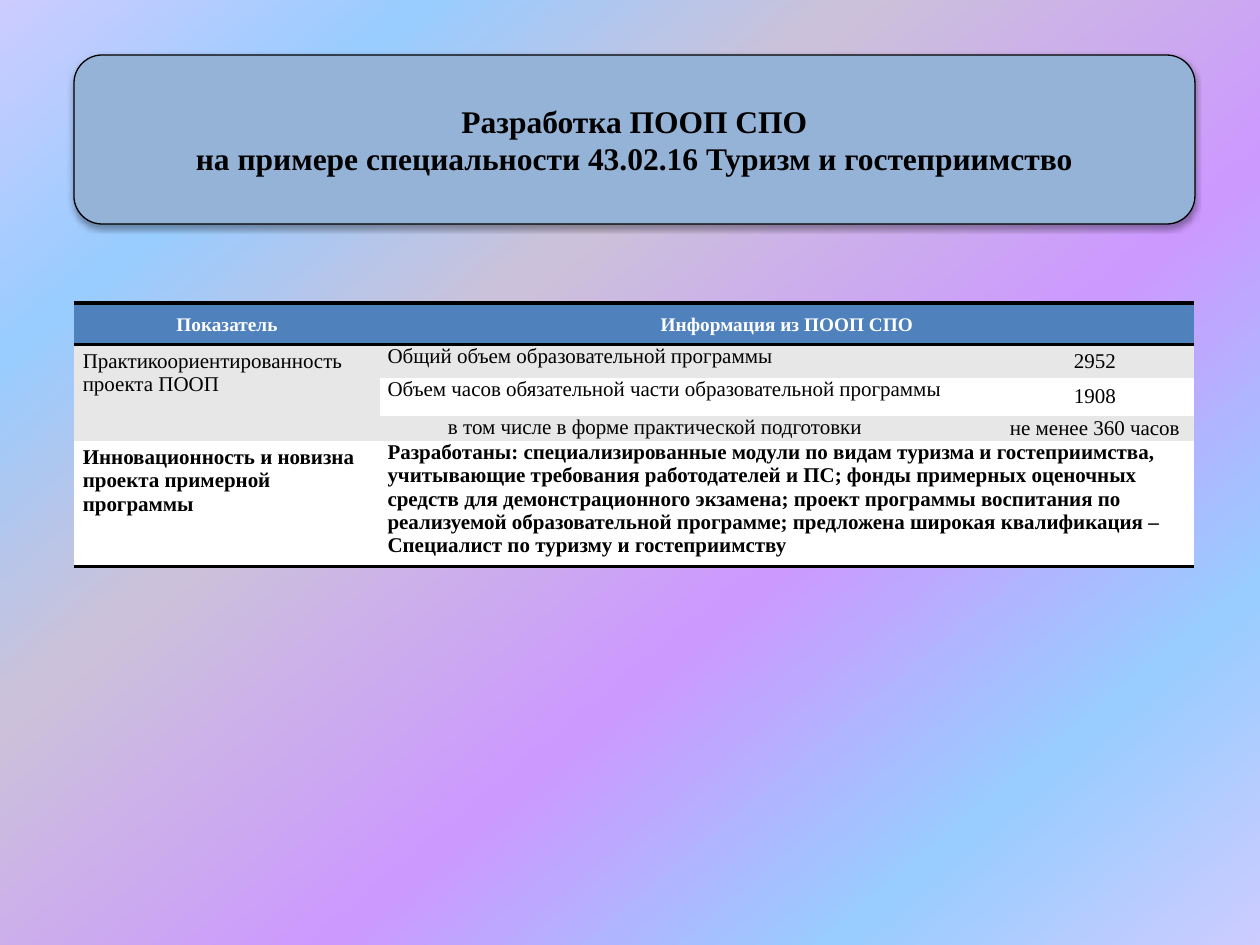
import pptx
import pptx.util
import pptx.dml.color
import pptx.enum.shapes
import pptx.enum.text
import pptx.oxml
import pptx.oxml.ns

SCALE = 914400 / 126
COLORS = {"black": "000000", "white": "FFFFFF", "banner": "95B3D7",
          "header": "4F81BD", "band": "E7E7E7"}
GRADIENT = [(0, "CCCCFF"), (18, "99CCFF"), (36, "CCC1DA"),
            (61, "CC99FF"), (82, "99CCFF"), (100, "CCCCFF")]
NAMESPACE = pptx.oxml.ns.nsdecls("a")
CENTER = pptx.enum.text.PP_ALIGN.CENTER
LEFT = pptx.enum.text.PP_ALIGN.LEFT
MIDDLE = pptx.enum.text.MSO_ANCHOR.MIDDLE
TOP = pptx.enum.text.MSO_ANCHOR.TOP


def px(value):
    return pptx.util.Emu(round(value * SCALE))


def format_text(text_frame, size, color, bold, alignment):
    for paragraph in text_frame.paragraphs:
        paragraph.alignment = alignment
        for run in paragraph.runs:
            run.font.name = "Times New Roman"
            run.font.size = pptx.util.Pt(size)
            run.font.bold = bold
            run.font.color.rgb = pptx.dml.color.RGBColor.from_string(COLORS[color])


presentation = pptx.Presentation()
presentation.slide_width = px(1260)
presentation.slide_height = px(945)
slide = presentation.slides.add_slide(presentation.slide_layouts[6])

background = slide.background.fill
background.gradient()
stops = background.gradient_stops
stop_list = slide._element.find(".//" + pptx.oxml.ns.qn("a:gsLst"))
for stop in list(stop_list):
    stop_list.remove(stop)
for position, color in GRADIENT:
    stop_list.append(pptx.oxml.parse_xml(
        f'<a:gs {NAMESPACE} pos="{position * 1000}"><a:srgbClr val="{color}"/></a:gs>'))
direction = slide._element.find(".//" + pptx.oxml.ns.qn("a:lin"))
direction.set("ang", str(50 * 60000))
direction.set("scaled", "0")

banner = slide.shapes.add_shape(
    pptx.enum.shapes.MSO_SHAPE.ROUNDED_RECTANGLE, px(74), px(55), px(1121), px(169))
banner.fill.solid()
banner.fill.fore_color.rgb = pptx.dml.color.RGBColor.from_string(COLORS["banner"])
banner.line.color.rgb = pptx.dml.color.RGBColor.from_string(COLORS["black"])
banner.line.width = pptx.util.Pt(0.75)
banner.shadow.inherit = False
banner._element.spPr.find(pptx.oxml.ns.qn("a:effectLst")).append(pptx.oxml.parse_xml(
    f'<a:outerShdw {NAMESPACE} blurRad="40000" dist="23000" dir="5400000" rotWithShape="0">'
    f'<a:srgbClr val="{COLORS["black"]}"><a:alpha val="35000"/></a:srgbClr></a:outerShdw>'))
banner.text_frame.text = ("Разработка ПООП СПО\n"
                          "на примере специальности 43.02.16 Туризм и гостеприимство")
banner.text_frame.vertical_anchor = MIDDLE
format_text(banner.text_frame, 18, "black", True, CENTER)

column_widths = [306, 616, 198]
row_heights = [42, 33, 38, 25, 126]
row_fills = ["header", "band", "white", "band", "white"]
row_borders = {0: ["lnT", "lnB"], 4: ["lnB"]}
rows = [
    ["Показатель", "Информация из ПООП СПО", ""],
    ["Практикоориентированность проекта ПООП", "Общий объем образовательной программы", "2952"],
    ["", "Объем часов обязательной части образовательной программы", "1908"],
    ["", "в том числе в форме практической подготовки", "не менее 360 часов"],
    ["Инновационность и новизна проекта примерной программы",
     "Разработаны: специализированные модули по видам туризма и гостеприимства, "
     "учитывающие требования работодателей и ПС; фонды примерных оценочных средств "
     "для демонстрационного экзамена; проект программы воспитания по реализуемой "
     "образовательной программе; предложена широкая квалификация – "
     "Специалист по туризму и гостеприимству", ""],
]

table = slide.shapes.add_table(
    len(rows), len(column_widths), px(74), px(303),
    px(sum(column_widths)), px(sum(row_heights))).table
table.first_row = False
table.horz_banding = False
style = table._tbl.tblPr.find(pptx.oxml.ns.qn("a:tableStyleId"))
style.text = "{2D5ABB26-0587-4C30-8999-92F81FD0307C}"
for column, width in zip(table.columns, column_widths):
    column.width = px(width)
for row, height in zip(table.rows, row_heights):
    row.height = px(height)

for row_index, texts in enumerate(rows):
    header = row_index == 0
    for column_index, text in enumerate(texts):
        cell = table.cell(row_index, column_index)
        centered = header or column_index == 2
        padded = header or column_index == 0
        cell.margin_left = cell.margin_right = pptx.util.Inches(0.07 if padded else 0.06)
        cell.margin_top = cell.margin_bottom = pptx.util.Inches(0.04 if padded else 0)
        cell.vertical_anchor = MIDDLE if centered else TOP
        cell.fill.solid()
        fill = "band" if column_index == 0 and row_index in (1, 2, 3) else row_fills[row_index]
        cell.fill.fore_color.rgb = pptx.dml.color.RGBColor.from_string(COLORS[fill])
        for order, edge in enumerate(row_borders.get(row_index, [])):
            cell._tc.get_or_add_tcPr().insert(order, pptx.oxml.parse_xml(
                f'<a:{edge} {NAMESPACE} w="25400"><a:solidFill>'
                f'<a:srgbClr val="{COLORS["black"]}"/></a:solidFill></a:{edge}>'))
        cell.text_frame.text = text
        format_text(cell.text_frame, 11 if header else 12, "white" if header else "black",
                    row_index in (0, 4), CENTER if centered else LEFT)
        if header:
            cell.text_frame.paragraphs[0].line_spacing = 1.07
            cell.text_frame.paragraphs[0].space_after = pptx.util.Pt(8)

indented = table.cell(3, 1).text_frame.paragraphs[0]
indented._p.get_or_add_pPr().set("indent", str(pptx.util.Inches(0.48)))
table.cell(0, 1).merge(table.cell(0, 2))
table.cell(1, 0).merge(table.cell(3, 0))
table.cell(4, 1).merge(table.cell(4, 2))

presentation.save("out.pptx")
